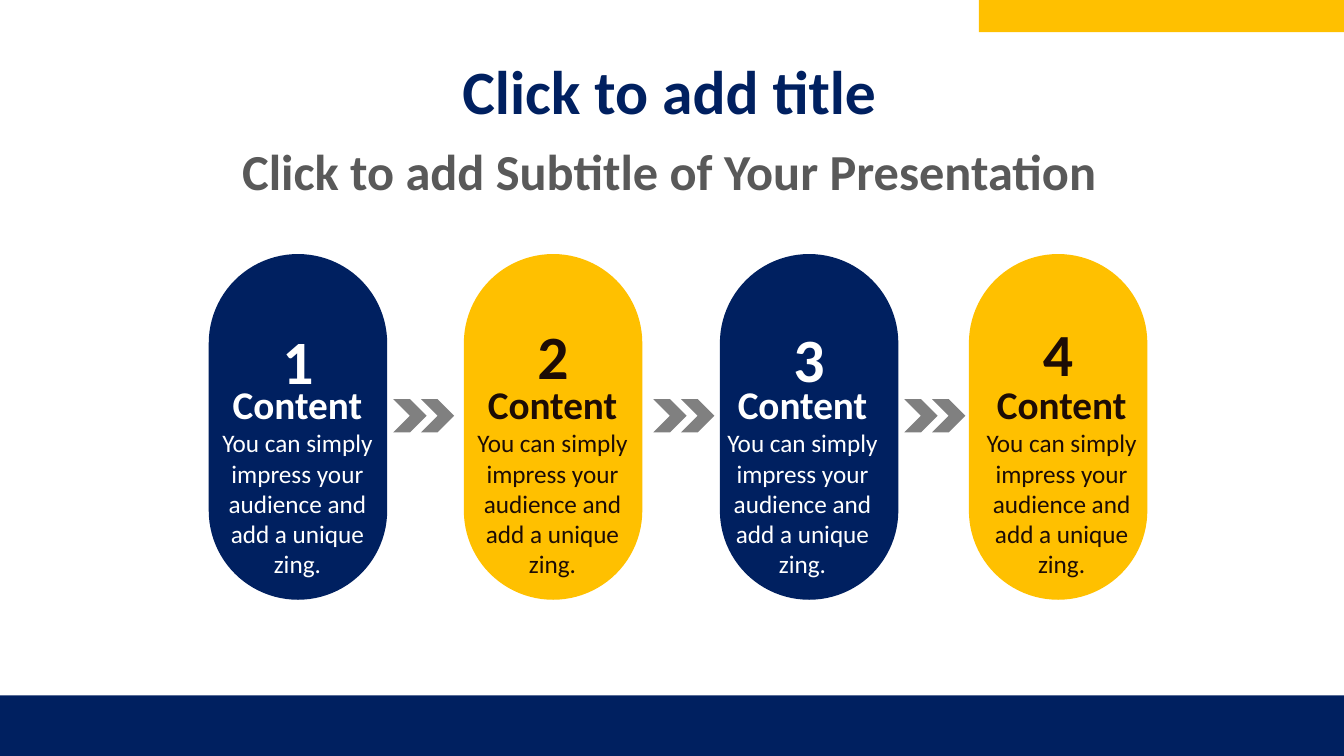
"""Build a title slide with four numbered pills joined by chevrons."""
import pptx
import pptx.util
import pptx.dml.color
import pptx.enum.shapes
import pptx.enum.text

SHAPE = pptx.enum.shapes.MSO_SHAPE
ANCHOR = pptx.enum.text.MSO_ANCHOR
FIT = pptx.enum.text.MSO_AUTO_SIZE
CENTER = pptx.enum.text.PP_ALIGN.CENTER
WIDTH, HEIGHT = pptx.util.Inches(13.33), pptx.util.Inches(7.5)
COLORS = {"navy": "002060", "gold": "FFC000", "gray": "808080",
          "slate": "595959", "white": "FFFFFF", "dark": "1D0C05"}
HEADING = {"word_wrap": True, "auto_size": FIT.NONE, "vertical_anchor": ANCHOR.MIDDLE}
NUMBER = {"word_wrap": True, "auto_size": FIT.SHAPE_TO_FIT_TEXT,
          "vertical_anchor": ANCHOR.TOP, "margin_left": 0, "margin_right": 0,
          "margin_top": 0, "margin_bottom": 0}
CONTENT = {"word_wrap": True, "auto_size": FIT.SHAPE_TO_FIT_TEXT,
           "vertical_anchor": ANCHOR.MIDDLE,
           "margin_left": pptx.util.Inches(0.09), "margin_right": pptx.util.Inches(0.09)}
BLURB = "You can simply impress your audience and add a unique zing."
STEPS = [
    ("1", 22.17, 37.87, 44, 22.13, "navy", "white"),
    ("2", 41.15, 37.2, 44, 41.11, "gold", "dark"),
    ("3", 60.2, 37.6, 44, 59.71, "navy", "white"),
    ("4", 78.73, 37.2, 42.7, 78.99, "gold", "dark"),
]
ARROWS = [29.26, 48.61, 67.29]


def rgb(name):
    """Return a named colour."""
    return pptx.dml.color.RGBColor.from_string(COLORS[name])


def apply(obj, values):
    """Set each attribute of an object from a dict."""
    for key, value in values.items():
        setattr(obj, key, value)


def box(left, top, width, height):
    """Turn percentages of the slide into lengths."""
    sizes = (left, top, width, height)
    return [int(v * full / 100) for v, full in zip(sizes, (WIDTH, HEIGHT) * 2)]


def centered(cx, top, width, height):
    """Return a box centred on a horizontal position."""
    return box(cx - width / 2, top, width, height)


def add_block(shapes, kind, bounds, color):
    """Add a plain filled shape."""
    s = shapes.add_shape(kind, *bounds)
    s.shadow.inherit = False
    s.fill.solid()
    s.fill.fore_color.rgb = rgb(color)
    s.line.fill.background()
    return s


def write(sp, lines, color, frame, spacing=1.0, tracking=0):
    """Fill a text frame with centred (text, size, bold) lines."""
    tf = sp.text_frame
    apply(tf, frame)
    for i, (text, size, bold) in enumerate(lines):
        p = tf.add_paragraph() if i else tf.paragraphs[0]
        apply(p, {"alignment": CENTER, "line_spacing": spacing,
                  "space_before": pptx.util.Pt(0)})
        r = p.add_run()
        r.text = text
        apply(r.font, {"name": "Calibri", "size": pptx.util.Pt(size), "bold": bold})
        r.font.color.rgb = rgb(color)
        if tracking:
            r._r.get_or_add_rPr().set("spc", str(tracking))


def add_heading(sp, bounds, text, size, color):
    """Move a placeholder and write a heading in it."""
    apply(sp, dict(zip(("left", "top", "width", "height"), bounds)))
    write(sp, [(text, size, True)], color, HEADING, 0.9)


def add_step(shapes, number, cx, top, size, fill, ink):
    """Add a pill with its round head and number."""
    g = shapes.add_group_shape().shapes
    pill = add_block(g, SHAPE.ROUNDED_RECTANGLE, centered(cx, 44.67, 25.73, 23.6), fill)
    pill.adjustments[0] = 0.5
    pill.rotation = 90
    add_block(g, SHAPE.OVAL, centered(cx, 36.27, 10.35, 18.53), fill)
    sp = g.add_textbox(*centered(cx, top, 11.4, 13.6))
    write(sp, [(number, size, True)], ink, NUMBER, 1.5, 70)


def add_arrow(shapes, left):
    """Add a pair of chevrons."""
    g = shapes.add_group_shape().shapes
    for i in range(2):
        add_block(g, SHAPE.CHEVRON, box(left + i * 2.06, 52.8, 2.48, 4.4), "gray")


def main():
    """Build and save the slide."""
    prs = pptx.Presentation()
    apply(prs, {"slide_width": WIDTH, "slide_height": HEIGHT})
    slide = prs.slides.add_slide(prs.slide_layouts[0])
    shapes = slide.shapes
    add_block(shapes, SHAPE.RECTANGLE, box(0, 92, 100, 8), "navy")
    add_block(shapes, SHAPE.RECTANGLE, box(72.84, 0, 27.16, 4.27), "gold")
    add_heading(shapes.title, box(3.23, 4.53, 93.17, 16),
                "Click to add title", 44, "navy")
    add_heading(slide.placeholders[1], box(6.68, 17.2, 86.27, 11.6),
                "Click to add Subtitle of Your Presentation", 36, "slate")
    for number, cx, top, size, _, fill, ink in STEPS:
        add_step(shapes, number, cx, top, size, fill, ink)
    for left in ARROWS:
        add_arrow(shapes, left)
    for *_, cx, _, ink in STEPS:
        sp = shapes.add_textbox(*centered(cx, 51.6, 12.75, 23.73))
        write(sp, [("Content", 28, True), (BLURB, 18, False)], ink, CONTENT)
    prs.save("out.pptx")


if __name__ == "__main__":
    main()
